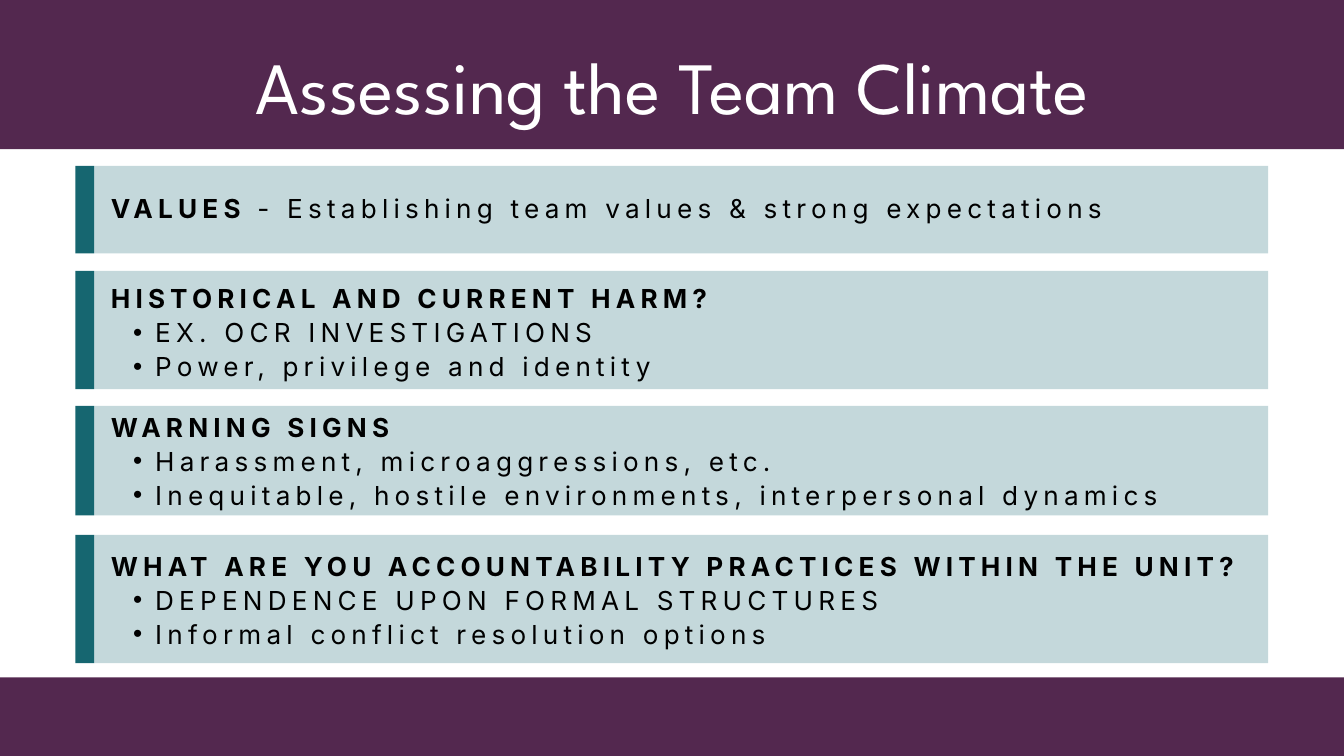
from lxml.etree import SubElement
from pptx import Presentation
from pptx.dml.color import RGBColor
from pptx.enum.shapes import MSO_SHAPE as Shape
from pptx.enum.text import PP_ALIGN as Align
from pptx.oxml.ns import qn
from pptx.util import Inches, Pt

WIDTH, HEIGHT = 20, 11.25
BLEED = 0.18
PLUM, TEAL, WHITE, BLACK = "53284F", "166670", "FFFFFF", "000000"
BAR_LEFT, BAR_W, PANEL_W = 1.12, 0.28, 17.47
TEXT_LEFT, TEXT_W, LINE_H = 1.65, 17.03, 0.5
INDENT, HANGING = 0.66, 0.33

# top, height, text top, heading, rest of the heading line, bullets
SECTIONS = [
    (2.47, 1.3, 2.82, "VALUES ",
     "- Establishing team values & strong expectations", []),
    (4.03, 1.76, 4.17, "HISTORICAL AND CURRENT HARM?", "",
     ["EX. OCR INVESTIGATIONS", "Power, privilege and identity"]),
    (6.04, 1.63, 6.08, "WARNING SIGNS", "",
     ["Harassment, microaggressions, etc.",
      "Inequitable, hostile environments, interpersonal dynamics"]),
    (7.96, 1.91, 8.15, "WHAT ARE YOU ACCOUNTABILITY PRACTICES WITHIN THE UNIT?", "",
     ["DEPENDENCE UPON FORMAL STRUCTURES", "Informal conflict resolution options"]),
]


def rgb(value):
    return RGBColor.from_string(value)


def add_rect(s, left, top, width, height, color, opacity=100):
    """Add a borderless rectangle; opacity is a percentage."""
    sp = s.shapes.add_shape(Shape.RECTANGLE, Inches(left), Inches(top),
                            Inches(width), Inches(height))
    sp.shadow.inherit = False
    sp.line.fill.background()
    sp.fill.solid()
    sp.fill.fore_color.rgb = rgb(color)
    if opacity < 100:
        clr = sp._element.spPr.find(qn("a:solidFill")).find(qn("a:srgbClr"))
        SubElement(clr, qn("a:alpha"), val=str(opacity * 1000))


def add_text_frame(s, left, top, width, height):
    tf = s.shapes.add_textbox(Inches(left), Inches(top),
                              Inches(width), Inches(height)).text_frame
    tf.word_wrap = True
    tf.margin_left = tf.margin_top = tf.margin_right = tf.margin_bottom = 0
    return tf


def add_run(p, text, font, size, color, bold=False, spacing=0):
    """Add a run; spacing is the letter spacing in points."""
    r = p.add_run()
    r.text = text
    r.font.name, r.font.size, r.font.bold = font, Pt(size), bold
    r.font.color.rgb = rgb(color)
    if spacing:
        r._r.get_or_add_rPr().set("spc", str(round(spacing * 100)))


def add_body_run(p, text, bold=False):
    p.line_spacing = Pt(36.4)
    add_run(p, text, "Inter", 28, BLACK, bold, spacing=5.6)


def add_bullet(tf, text):
    p = tf.add_paragraph()
    p.level = 1
    pPr = p._p.get_or_add_pPr()
    pPr.set("marL", str(Inches(INDENT)))
    pPr.set("indent", str(-Inches(HANGING)))
    SubElement(pPr, qn("a:buFont"), typeface="Arial")
    SubElement(pPr, qn("a:buChar"), char="•")
    add_body_run(p, text)


def add_section(s, top, height, text_top, heading, detail, bullets):
    add_rect(s, BAR_LEFT + BAR_W, top, PANEL_W, height, TEAL, opacity=25)
    add_rect(s, BAR_LEFT, top, BAR_W, height, TEAL)
    tf = add_text_frame(s, TEXT_LEFT, text_top, TEXT_W, LINE_H * (1 + len(bullets)))
    p = tf.paragraphs[0]
    add_body_run(p, heading, bold=True)
    if detail:
        add_body_run(p, detail)
    for text in bullets:
        add_bullet(tf, text)


def add_bands(s):
    for top, height in ((0, 2.22), (10.08, HEIGHT - 10.08)):
        add_rect(s, -BLEED, top, WIDTH + 2 * BLEED, height, PLUM)


def add_title(s, text):
    p = add_text_frame(s, 0.87, 0.61, 18.27, 1.3).paragraphs[0]
    p.alignment = Align.CENTER
    p.line_spacing = Pt(94.8)
    add_run(p, text, "League Spartan", 79, WHITE)


def main():
    prs = Presentation()
    prs.slide_width, prs.slide_height = Inches(WIDTH), Inches(HEIGHT)
    s = prs.slides.add_slide(prs.slide_layouts[6])
    add_bands(s)
    add_title(s, "Assessing the Team Climate")
    for section in SECTIONS:
        add_section(s, *section)
    prs.save("out.pptx")


if __name__ == "__main__":
    main()
